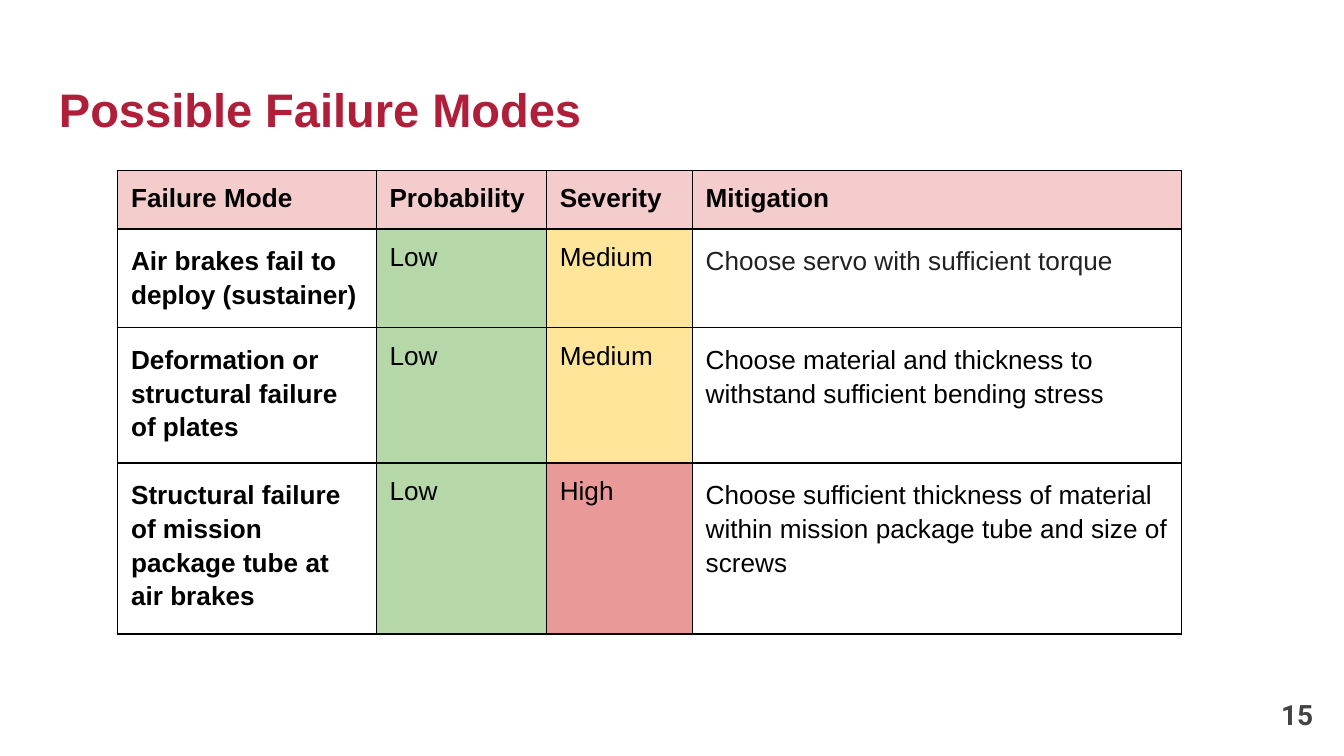
from lxml import etree
from pptx import Presentation
from pptx import util as u
from pptx.dml.color import RGBColor
from pptx.enum import text
from pptx.oxml import ns

RED = RGBColor(0xAF, 0x1F, 0x39)
GRAY = RGBColor(0x43, 0x43, 0x43)
DARK = RGBColor(0x21, 0x21, 0x21)
BLACK = RGBColor(0, 0, 0)
PINK = RGBColor(0xF4, 0xCC, 0xCC)
GREEN = RGBColor(0xB6, 0xD7, 0xA8)
YELLOW = RGBColor(0xFF, 0xE5, 0x99)
ROSE = RGBColor(0xEA, 0x99, 0x99)
LEVELS = {"Low": GREEN, "Medium": YELLOW, "High": ROSE}
Pt = u.Pt


def style(para, size, face, color, bold):
    for run in para.runs:
        run.font.size = Pt(size)
        run.font.name = face
        run.font.color.rgb = color
        run.font.bold = bold


def border(cell):
    props = cell._tc.get_or_add_tcPr()
    for side in ("a:lnL", "a:lnR", "a:lnT", "a:lnB"):
        line = etree.SubElement(props, ns.qn(side), w=str(Pt(0.75)))
        fill = etree.SubElement(line, ns.qn("a:solidFill"))
        etree.SubElement(fill, ns.qn("a:srgbClr"), val=str(BLACK))


deck = Presentation()
deck.slide_width, deck.slide_height = Pt(720), Pt(405)
slide = deck.slides.add_slide(deck.slide_layouts[6])

labels = [
    ("Possible Failure Modes", (24.5, 35.3, 671, 45.4), 25.2, "Arial", RED, text.PP_ALIGN.LEFT),
    ("15", (667.4, 367.2, 43.2, 31), 15, "Roboto", GRAY, text.PP_ALIGN.RIGHT),
]
for words, place, size, face, color, align in labels:
    frame = slide.shapes.add_textbox(*map(Pt, place)).text_frame
    frame.word_wrap = True
    frame.vertical_anchor = text.MSO_ANCHOR.MIDDLE
    frame.margin_left = frame.margin_right = Pt(7.2)
    frame.margin_top = frame.margin_bottom = Pt(7.2)
    frame.text = words
    frame.paragraphs[0].alignment = align
    style(frame.paragraphs[0], size, face, color, True)

rows = [
    ("Failure Mode", "Probability", "Severity", "Mitigation"),
    ("Air brakes fail to deploy (sustainer)", "Low", "Medium",
     "Choose servo with sufficient torque"),
    ("Deformation or structural failure of plates", "Low", "Medium",
     "Choose material and thickness to withstand sufficient bending stress"),
    ("Structural failure of mission package tube at air brakes", "Low", "High",
     "Choose sufficient thickness of material within mission package tube and size of screws"),
]
widths = [138.5, 91.2, 78.2, 262]
heights = [30.4, 50.5, 68.5, 86.7]
table = slide.shapes.add_table(
    len(rows), len(widths), Pt(63), Pt(91.4), Pt(sum(widths)), Pt(sum(heights))
).table
table.first_row = table.horz_banding = False
for col, width in zip(table.columns, widths):
    col.width = Pt(width)
for row, height in zip(table.rows, heights):
    row.height = Pt(height)

for r, row in enumerate(rows):
    for c, words in enumerate(row):
        cell = table.cell(r, c)
        border(cell)
        cell.margin_left = cell.margin_right = Pt(7.2)
        cell.margin_top = cell.margin_bottom = Pt(7.2)
        shade = PINK if r == 0 else LEVELS.get(words)
        if shade:
            cell.fill.solid()
            cell.fill.fore_color.rgb = shade
        else:
            cell.fill.background()
        cell.text_frame.text = words
        para = cell.text_frame.paragraphs[0]
        if r > 0 and c in (0, 3):
            para.line_spacing = 1.15
        color = DARK if (r, c) == (1, 3) else BLACK
        style(para, 14, "Arial", color, r == 0 or c == 0)

deck.save("out.pptx")
